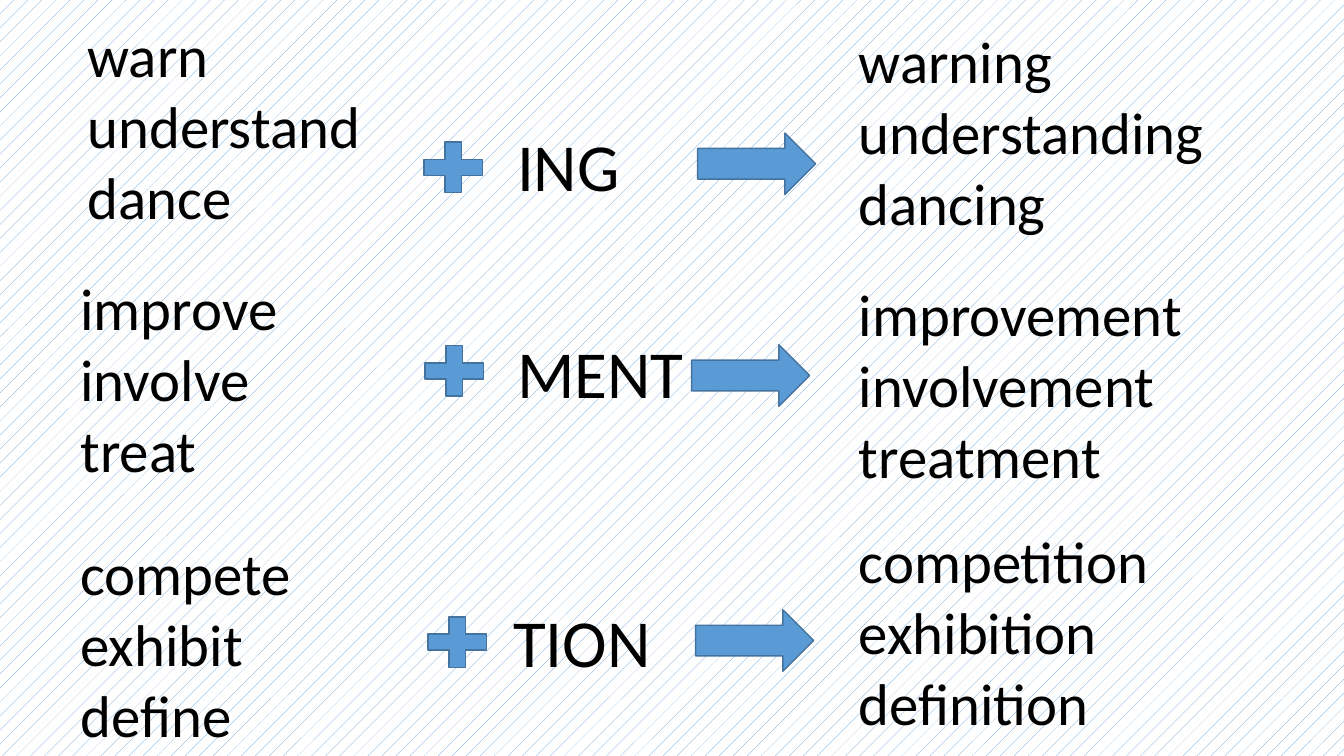
"""Build a slide on forming nouns with the suffixes ING, MENT and TION."""
from dataclasses import dataclass

from pptx import Presentation
from pptx import util as u
from pptx.dml.color import RGBColor
from pptx.enum import dml, shapes


@dataclass(frozen=True)
class Theme:
    """Hold the colours, font and type sizes of the slide."""
    ink: RGBColor = RGBColor(0, 0, 0)
    paper: RGBColor = RGBColor(255, 255, 255)
    blue: RGBColor = RGBColor(0x5B, 0x9B, 0xD5)
    edge: RGBColor = RGBColor(0x43, 0x73, 0x9E)
    font: str = "Calibri"
    word: int = 42
    suffix: int = 48


THEME = Theme()
ROWS = [
    (("warn", "understand", "dance"), (0.77, 0.14), (4.1, 1.32),
     "ING", (5.03, 1.18), (6.92, 1.32),
     ("warning", "understanding", "dancing"), 0.2),
    (("improve", "involve", "treat"), (0.7, 2.65), (4.11, 3.34),
     "MENT", (5.03, 3.24), (6.86, 3.42),
     ("improvement", "involvement", "treatment"), 2.71),
    (("compete", "exhibit", "define"), (0.7, 5.28), (4.14, 6.03),
     "TION", (4.99, 5.91), (6.9, 6.05),
     ("competition", "exhibition", "definition"), 5.16),
]


def place(spot, size):
    """Turn a position and a size into lengths."""
    return [u.Inches(n) for n in (*spot, *size)]


def add_text(slide, lines, spot, size, points, wrap=True):
    """Add a text box with one paragraph per line."""
    frame = slide.shapes.add_textbox(*place(spot, size)).text_frame
    frame.word_wrap = wrap
    frame.text = "\n".join(lines)
    for line in frame.paragraphs:
        line.font.name = THEME.font
        line.font.size = u.Pt(points)
        line.font.color.rgb = THEME.ink


def add_sign(slide, kind, spot, size):
    """Add a blue plus sign or arrow."""
    sign = slide.shapes.add_shape(kind, *place(spot, size))
    sign.shadow.inherit = False
    sign.fill.solid()
    sign.fill.fore_color.rgb = THEME.blue
    sign.line.color.rgb = THEME.edge
    sign.line.width = u.Pt(1)


def set_back(slide):
    """Give the slide its patterned background."""
    fill = slide.background.fill
    fill.patterned()
    fill.pattern = dml.MSO_PATTERN.PERCENT_5
    fill.fore_color.rgb = THEME.blue
    fill.back_color.rgb = THEME.paper


def main():
    """Build and save the slide."""
    deck = Presentation()
    deck.slide_width, deck.slide_height = u.Inches(13.33), u.Inches(7.5)
    slide = deck.slides.add_slide(deck.slide_layouts[6])
    set_back(slide)
    kinds = shapes.MSO_SHAPE
    for verbs, left, plus, suffix, mid, arrow, nouns, top in ROWS:
        add_text(slide, verbs, left, (3.4, 2.22), THEME.word)
        add_sign(slide, kinds.MATH_PLUS, plus, (0.79, 0.68))
        add_text(slide, [suffix], mid, (1.87, 0.91), THEME.suffix, False)
        add_sign(slide, kinds.RIGHT_ARROW, arrow, (1.17, 0.61))
        add_text(slide, nouns, (8.42, top), (4.8, 2.22), THEME.word)
    deck.save("out.pptx")


if __name__ == "__main__":
    main()
